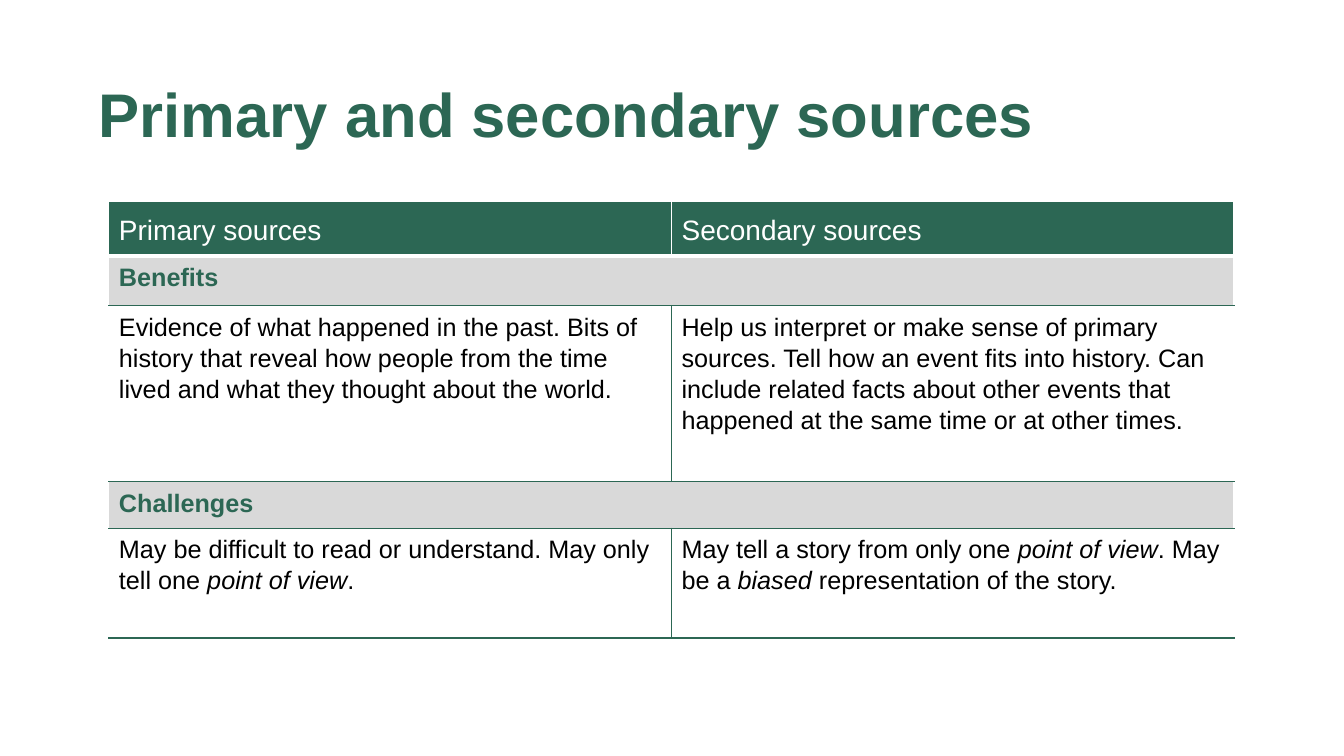
import pptx
import pptx.dml.color
import pptx.enum.text
import pptx.oxml.ns
import pptx.util
from lxml import etree

GREEN = pptx.dml.color.RGBColor(0x2C, 0x67, 0x54)
GREY = pptx.dml.color.RGBColor(0xD9, 0xD9, 0xD9)
WHITE = pptx.dml.color.RGBColor(0xFF, 0xFF, 0xFF)
BLACK = pptx.dml.color.RGBColor(0x00, 0x00, 0x00)

FONT = "Arial"
COLUMN_WIDTH = 5.58
ROW_HEIGHTS = [0.54, 0.49, 1.75, 0.46, 1.09]

# Each cell is a list of runs: odd-numbered runs are italic.
HEADER = [["Primary sources"], ["Secondary sources"]]
BENEFITS = [
    ["Evidence of what happened in the past. Bits of history that reveal how "
     "people from the time lived and what they thought about the world."],
    ["Help us interpret or make sense of primary sources. Tell how an event "
     "fits into history. Can include related facts about other events that "
     "happened at the same time or at other times."],
]
CHALLENGES = [
    ["May be difficult to read or understand. May only tell one ",
     "point of view", "."],
    ["May tell a story from only one ", "point of view", ". May be a ",
     "biased ", "representation of the story."],
]


def format_font(font, size, color, bold=False):
    font.name = FONT
    font.size = pptx.util.Pt(size)
    font.color.rgb = color
    font.bold = bold


def add_title(s, text):
    title = s.shapes.title
    title.left, title.top = pptx.util.Inches(0.98), pptx.util.Inches(0.46)
    title.width, title.height = pptx.util.Inches(10.78), pptx.util.Inches(1.41)
    tf = title.text_frame
    tf.text = text
    tf.word_wrap = True
    tf.auto_size = pptx.enum.text.MSO_AUTO_SIZE.NONE
    tf.vertical_anchor = pptx.enum.text.MSO_ANCHOR.MIDDLE
    tf.margin_left = tf.margin_right = tf.margin_top = tf.margin_bottom = 0
    p = tf.paragraphs[0]
    p.alignment = pptx.enum.text.PP_ALIGN.LEFT
    p.line_spacing = 0.9
    format_font(p.runs[0].font, 44, GREEN, bold=True)


def set_borders(cell, **sides):
    """Draw cell borders; each side (L, R, T, B) is a (colour, points) pair."""
    tc_pr = cell._tc.get_or_add_tcPr()
    qn = pptx.oxml.ns.qn
    for side in "LRTB":
        color, width = sides.get(side, (WHITE, 1))
        ln = etree.SubElement(tc_pr, qn(f"a:ln{side}"),
                              w=str(pptx.util.Pt(width)))
        fill = etree.SubElement(ln, qn("a:solidFill"))
        etree.SubElement(fill, qn("a:srgbClr"), val=str(color))


def fill_cell(cell, runs, size, color, background, bold=False):
    cell.fill.solid()
    cell.fill.fore_color.rgb = background
    p = cell.text_frame.paragraphs[0]
    p.line_spacing = 1.1
    for i, text in enumerate(runs):
        r = p.add_run()
        r.text = text
        format_font(r.font, size, color, bold)
        r.font.italic = i % 2 == 1


def add_header_row(table, row, texts):
    for col, runs in enumerate(texts):
        cell = table.cell(row, col)
        set_borders(cell, B=(WHITE, 3))
        cell.vertical_anchor = pptx.enum.text.MSO_ANCHOR.MIDDLE
        fill_cell(cell, runs, 20, WHITE, GREEN)


def add_section(table, row, heading, texts, top):
    """Fill a merged heading row and the text row under it."""
    rule = (GREEN, 1)
    table.cell(row, 0).merge(table.cell(row, 1))
    for col in range(2):
        set_borders(table.cell(row, col), T=top, B=rule)
    fill_cell(table.cell(row, 0), [heading], 18, GREEN, GREY, bold=True)
    for col, (runs, inner) in enumerate(zip(texts, "RL")):
        cell = table.cell(row + 1, col)
        set_borders(cell, T=rule, B=rule, **{inner: rule})
        fill_cell(cell, runs, 18, BLACK, WHITE)


def add_sources_table(s):
    frame = s.shapes.add_table(
        len(ROW_HEIGHTS), 2, pptx.util.Inches(1.08), pptx.util.Inches(2),
        pptx.util.Inches(2 * COLUMN_WIDTH), pptx.util.Inches(sum(ROW_HEIGHTS)))
    table = frame.table
    table.horz_banding = False
    for row, height in zip(table.rows, ROW_HEIGHTS):
        row.height = pptx.util.Inches(height)
    add_header_row(table, 0, HEADER)
    add_section(table, 1, "Benefits", BENEFITS, top=(WHITE, 3))
    add_section(table, 3, "Challenges", CHALLENGES, top=(GREEN, 1))


def main():
    prs = pptx.Presentation()
    prs.slide_width = pptx.util.Inches(13.33)
    prs.slide_height = pptx.util.Inches(7.5)
    s = prs.slides.add_slide(prs.slide_layouts.get_by_name("Title Only"))
    add_title(s, "Primary and secondary sources")
    add_sources_table(s)
    prs.save("out.pptx")


if __name__ == "__main__":
    main()
